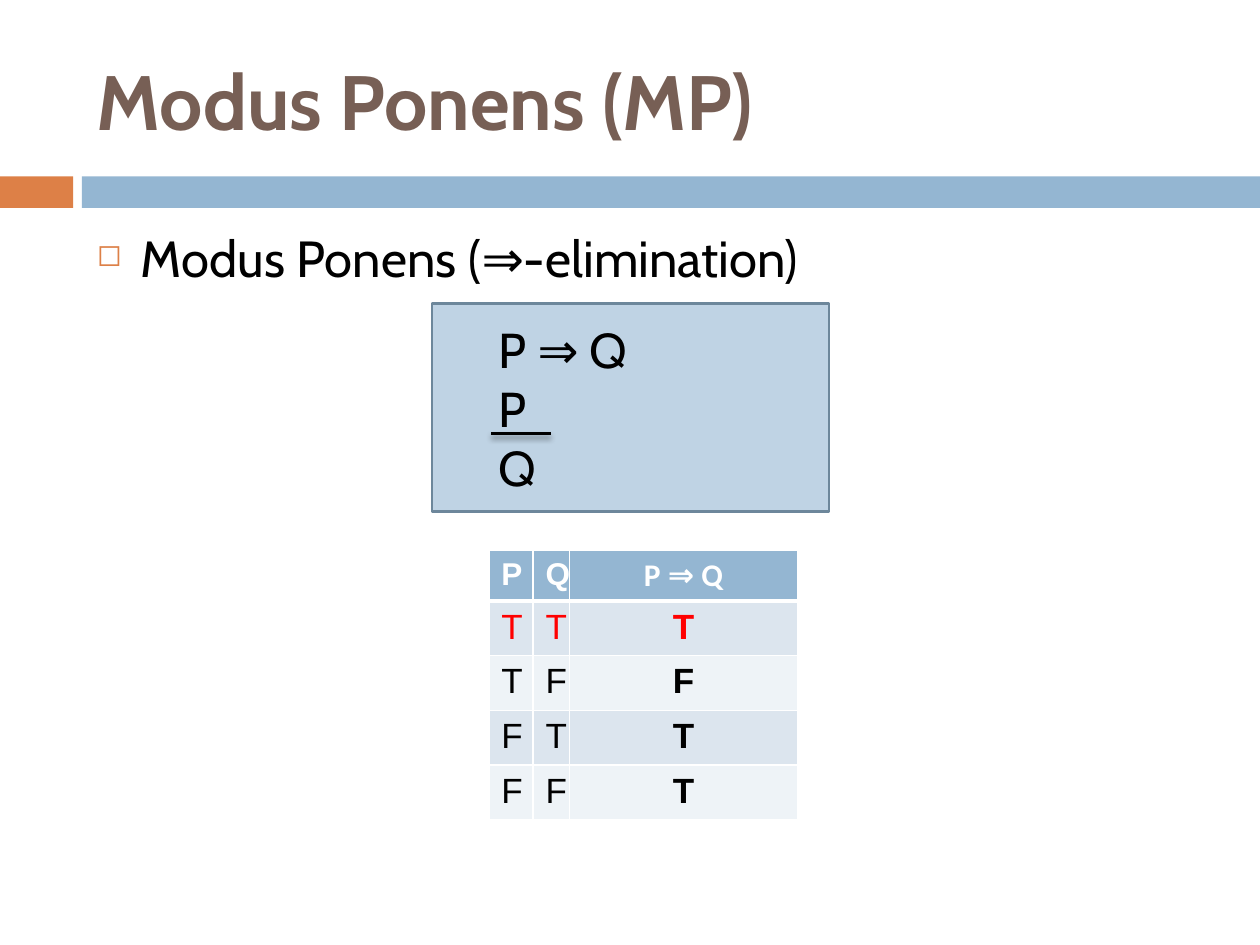
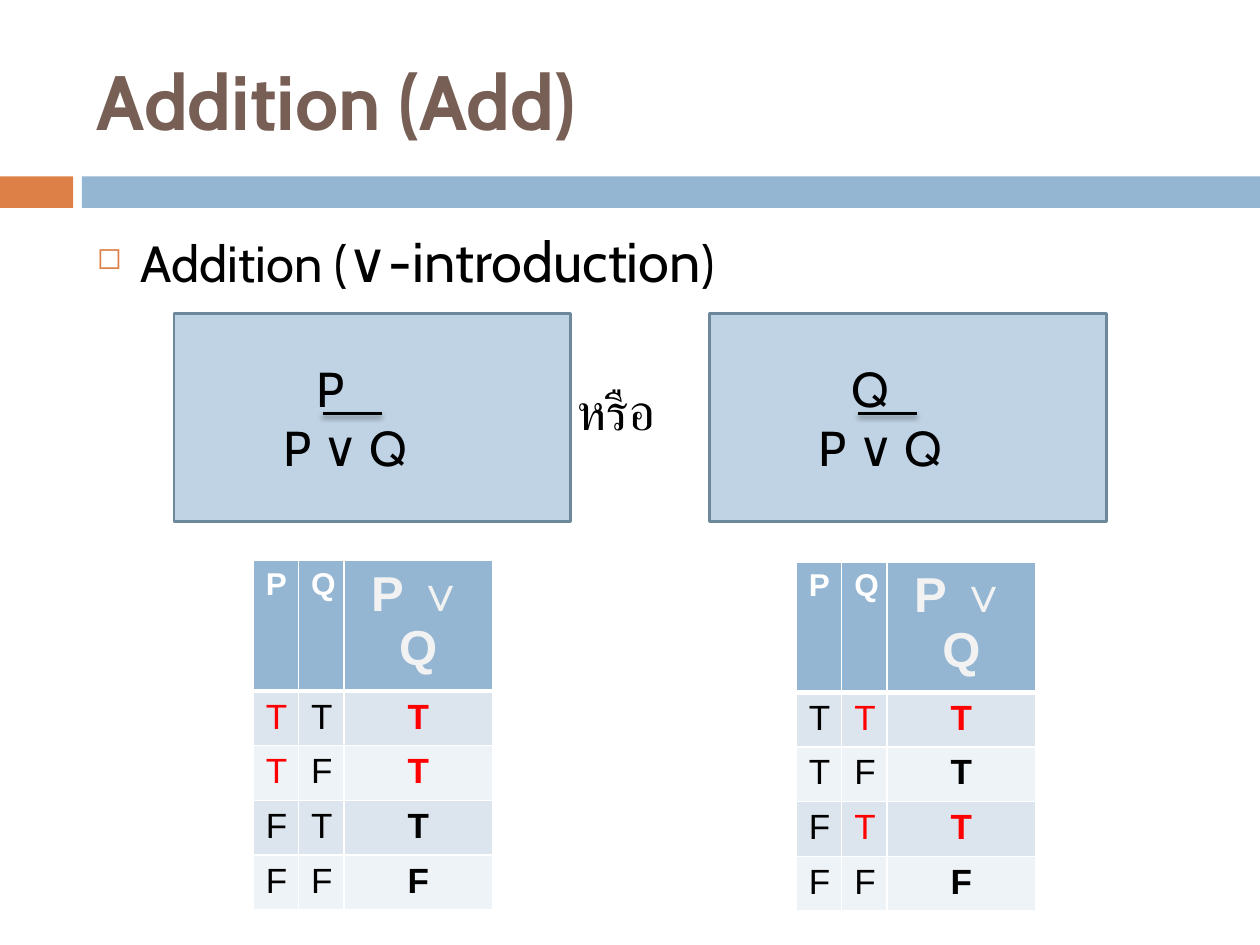
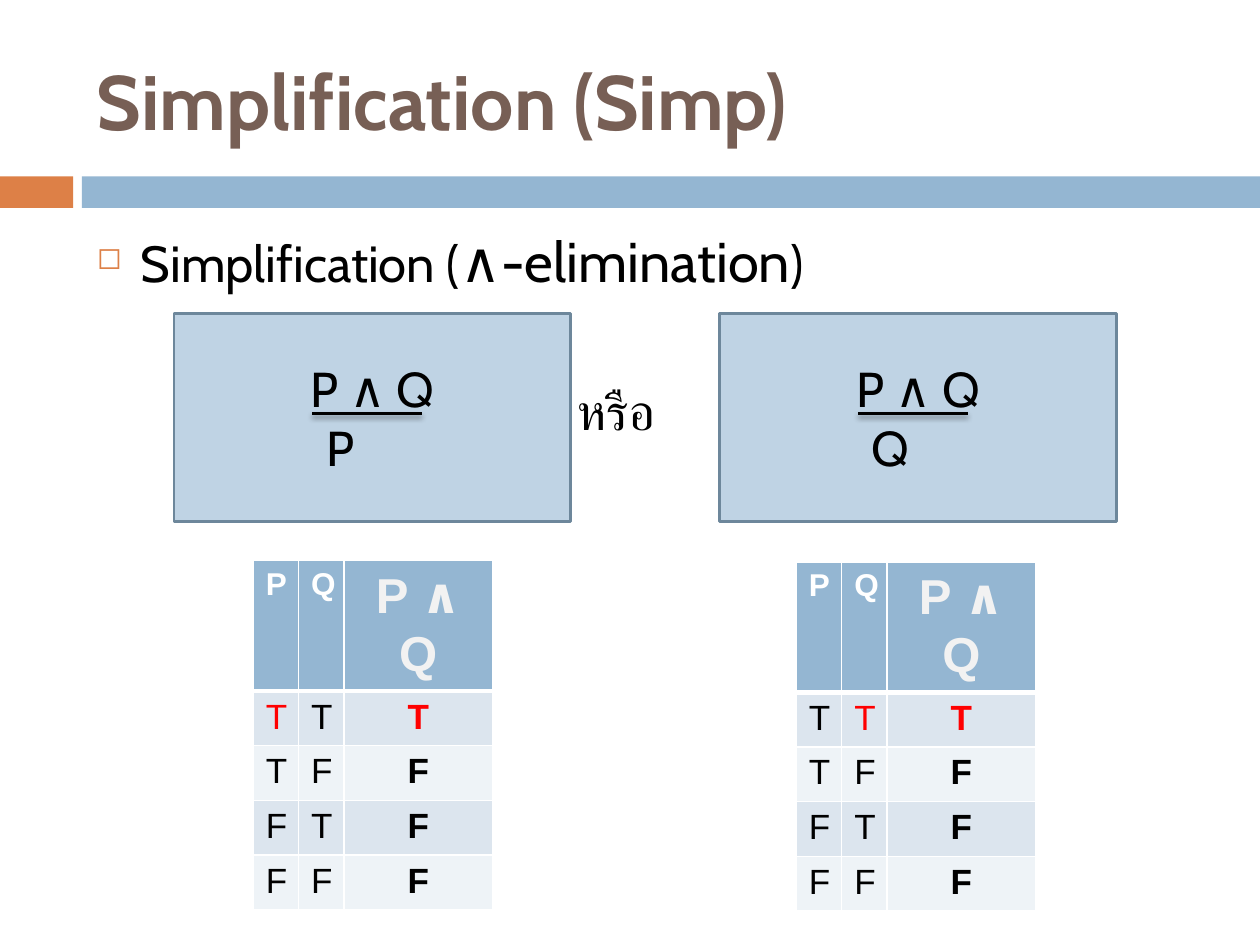
from typing import NamedTuple, Callable, Optional, Sequence

import lxml.etree
import pptx
import pptx.dml.color
import pptx.enum.shapes
import pptx.enum.text
import pptx.oxml.ns
import pptx.util

COLS, ROWS = 100, 75          # the grid that covers each slide
CELL = 0.1                    # inches per column and per row
ORANGE, BLUE, BROWN = "DD8047", "94B6D2", "775F55"
BLACK, WHITE, RED = "000000", "FFFFFF", "FF0000"
PALE, EDGE, PEARL = "BFD3E4", "6D879B", "F2F2F2"
STRIPES = "DCE5EE", "EEF3F7"
TITLE = {"name": "Cabin", "size": pptx.util.Pt(44), "bold": True}
BODY = {"name": "Cabin", "size": pptx.util.Pt(29)}
LARGE = {"name": "Cabin", "size": pptx.util.Pt(32)}
PROOF = {"name": "Cabin", "size": pptx.util.Pt(28)}
HEAD = {"name": "Arial", "size": pptx.util.Pt(18), "bold": True}
VALUE = {"name": "Arial", "size": pptx.util.Pt(20)}
ARROW = HEAD | {"name": "Calibri"}
WIDE = HEAD | {"size": pptx.util.Pt(28)}
OR = "หรือ"
LEFT, CENTER = pptx.enum.text.PP_ALIGN.LEFT, pptx.enum.text.PP_ALIGN.CENTER
RECT = pptx.enum.shapes.MSO_SHAPE.RECTANGLE
MIDDLE = pptx.enum.text.MSO_ANCHOR.MIDDLE


class Line(NamedTuple):
    text: str
    indent: Optional[float] = None    # None centres the line


class Proof(NamedTuple):
    left: float
    top: float
    lines: Sequence[Line]
    rule: Sequence[float]             # column, row, length inside the box


class Truth(NamedTuple):
    left: float
    top: float
    widths: Sequence[float]
    marks: Sequence[int]              # columns shown in red where true


class Rule(NamedTuple):
    title: str
    topic: Sequence[tuple]
    formula: str
    look: dict
    shade: str
    test: Callable[[bool, bool], bool]
    proofs: Sequence[Proof]
    truths: Sequence[Truth]


def grid(count: float) -> int:
    return pptx.util.Inches(count * CELL)


def color(code: str) -> pptx.dml.color.RGBColor:
    return pptx.dml.color.RGBColor.from_string(code)


def child(parent, tag: str, **attrs):
    return lxml.etree.SubElement(parent, pptx.oxml.ns.qn(tag), attrs)


def write(para, text: str, look: dict, shade: str) -> None:
    """Add text, with each ∧ set in Calibri."""
    for part in text.replace("∧", "|∧|").split("|"):
        if part:
            run = para.add_run()
            run.text = part
            face = look | ({"name": "Calibri"} if part == "∧" else {})
            for key, value in face.items():
                setattr(run.font, key, value)
            run.font.color.rgb = color(shade)


def indent(para, left: float, first: float = 0) -> None:
    props = para._p.get_or_add_pPr()
    props.set("marL", str(grid(left)))
    props.set("indent", str(grid(first)))


def block(slide, left: float, top: float, width: float, height: float,
          fill: str, edge: str = ""):
    shape = slide.shapes.add_shape(RECT, *map(grid, (left, top, width, height)))
    shape.shadow.inherit = False
    shape.fill.solid()
    shape.fill.fore_color.rgb = color(fill)
    if edge:
        shape.line.color.rgb = color(edge)
        shape.line.width = pptx.util.Pt(1.5)
    else:
        shape.line.fill.background()
    return shape


def frame(slide, left: float, top: float, width: float, height: float):
    box = slide.shapes.add_textbox(*map(grid, (left, top, width, height)))
    box.text_frame.word_wrap = True
    return box.text_frame


def base(slide, rule: Rule) -> None:
    """Draw the bands, the title and the topic line."""
    block(slide, 0, 14, 5.8, 2.5, ORANGE)
    block(slide, 6.5, 14, COLS - 6.5, 2.5, BLUE)
    title = frame(slide, 6.7, 2.5, 89.2, 10.8)
    title.vertical_anchor = MIDDLE
    write(title.paragraphs[0], rule.title, TITLE, BROWN)

    body = frame(slide, 6.7, 17.5, 91.3, 55.4)
    para = body.paragraphs[0]
    para.space_before = pptx.util.Pt(7)
    indent(para, 3.5, -3.5)
    props = para._p.get_or_add_pPr()
    child(child(props, "a:buClr"), "a:srgbClr", val=ORANGE)
    child(props, "a:buSzPct", val="60000")
    child(props, "a:buChar", char="◻")
    for text, look in rule.topic:
        write(para, text, look, BLACK)
    if len(rule.proofs) > 1:
        para = body.add_paragraph()
        para.space_before = pptx.util.Pt(49)
        indent(para, 38.1)
        write(para, OR, BODY, BLACK)


def prove(slide, proof: Proof) -> None:
    box = block(slide, proof.left, proof.top, 31.5, 16.5, PALE, EDGE)
    text = box.text_frame
    text.vertical_anchor = MIDDLE
    for num, line in enumerate(proof.lines):
        para = text.add_paragraph() if num else text.paragraphs[0]
        para.alignment = CENTER if line.indent is None else LEFT
        indent(para, line.indent or 0)
        write(para, line.text, PROOF, BLACK)

    col, row, length = proof.rule
    left, top = proof.left + col, proof.top + row
    bar = slide.shapes.add_connector(
        pptx.enum.shapes.MSO_CONNECTOR.STRAIGHT,
        *map(grid, (left, top, left + length, top)))
    bar.line.color.rgb = color(BLACK)
    bar.line.width = pptx.util.Pt(1.5)
    effect = child(bar._element.spPr, "a:effectLst")
    shadow = child(effect, "a:outerShdw", blurRad="38100", dist="30000",
                   dir="5400000", rotWithShape="0")
    child(child(shadow, "a:srgbClr", val=BLACK), "a:alpha", val="45000")


def fill(cell, text: str, look: dict, shade: str, back: str, base: float) -> None:
    """Set a cell's text, fill and borders; base is the lower border's width."""
    para = cell.text_frame.paragraphs[0]
    para.alignment = CENTER
    write(para, text, look, shade)
    props = cell._tc.get_or_add_tcPr()
    for side, width in zip("LRTB", (1, 1, 1, base)):
        line = child(props, f"a:ln{side}", w=str(pptx.util.Pt(width)))
        child(child(line, "a:solidFill"), "a:srgbClr", val=WHITE)
    cell.fill.solid()
    cell.fill.fore_color.rgb = color(back)


def tabulate(slide, rule: Rule, truth: Truth) -> None:
    heights = [4] + [4.3] * 4
    size = sum(truth.widths), sum(heights)
    table = slide.shapes.add_table(
        5, 3, *map(grid, (truth.left, truth.top, *size))).table
    table.first_row = table.horz_banding = False
    for col, width in zip(table.columns, truth.widths):
        col.width = grid(width)
    for row, height in zip(table.rows, heights):
        row.height = grid(height)

    heads = (("P", HEAD, WHITE), ("Q", HEAD, WHITE),
             (rule.formula, rule.look, rule.shade))
    for col, head in enumerate(heads):
        fill(table.cell(0, col), *head, BLUE, 3)
    cases = [(p, q) for p in (True, False) for q in (True, False)]
    for row, (p, q) in enumerate(cases):
        values = p, q, rule.test(p, q)
        hit = all(values[mark] for mark in truth.marks)
        for col, value in enumerate(values):
            shade = RED if hit and col in truth.marks else BLACK
            fill(table.cell(row + 1, col), "T" if value else "F",
                 VALUE | {"bold": col == 2}, shade, STRIPES[row % 2], 1)


def pair(lefts: Sequence[float], make: Callable[[str], Sequence[Line]],
         bar: Sequence[float]) -> list:
    """Give one proof for P and one for Q."""
    return [Proof(left, 24.9, make(name), bar) for left, name in zip(lefts, "PQ")]


NARROW = 3.6, 3.6, 11.8
TWINS = [Truth(20.1, 44.5, NARROW, (0, 2)), Truth(63.2, 44.6, NARROW, (1, 2))]
RULES = [
    Rule("Modus Ponens (MP)", [("Modus Ponens (⇒-elimination)", BODY)],
         "P ⇒ Q", ARROW, WHITE, lambda p, q: not p or q,
         [Proof(34.3, 24.1, [Line(text, 4.3) for text in ("P ⇒ Q", "P", "Q")],
                (4.7, 10.3, 4.7))],
         [Truth(38.8, 43.7, (3.5, 2.9, 18.1), (0, 1, 2))]),
    Rule("Addition (Add)",
         [("Addition (", BODY), ("∨-introduction", LARGE), (")", BODY)],
         "P ∨ Q", WIDE, PEARL, lambda p, q: p or q,
         pair((13.8, 56.3), lambda name: [Line(name, 10.3), Line("P ∨ Q", 7.7)],
              (11.8, 7.9, 4.7)),
         TWINS),
    Rule("Simplification (Simp)",
         [("Simplification (", BODY), ("∧-elimination", LARGE), (")", BODY)],
         "P ∧ Q", WIDE, PEARL, lambda p, q: p and q,
         pair((13.8, 57.1), lambda name: [Line("P ∧ Q"), Line(name, 11.1)],
              (11, 7.9, 8.7)),
         TWINS),
]


def main() -> None:
    deck = pptx.Presentation()
    deck.slide_width, deck.slide_height = grid(COLS), grid(ROWS)
    for rule in RULES:
        slide = deck.slides.add_slide(deck.slide_layouts[6])
        base(slide, rule)
        for proof in rule.proofs:
            prove(slide, proof)
        for truth in rule.truths:
            tabulate(slide, rule, truth)
    deck.save("out.pptx")


if __name__ == "__main__":
    main()
